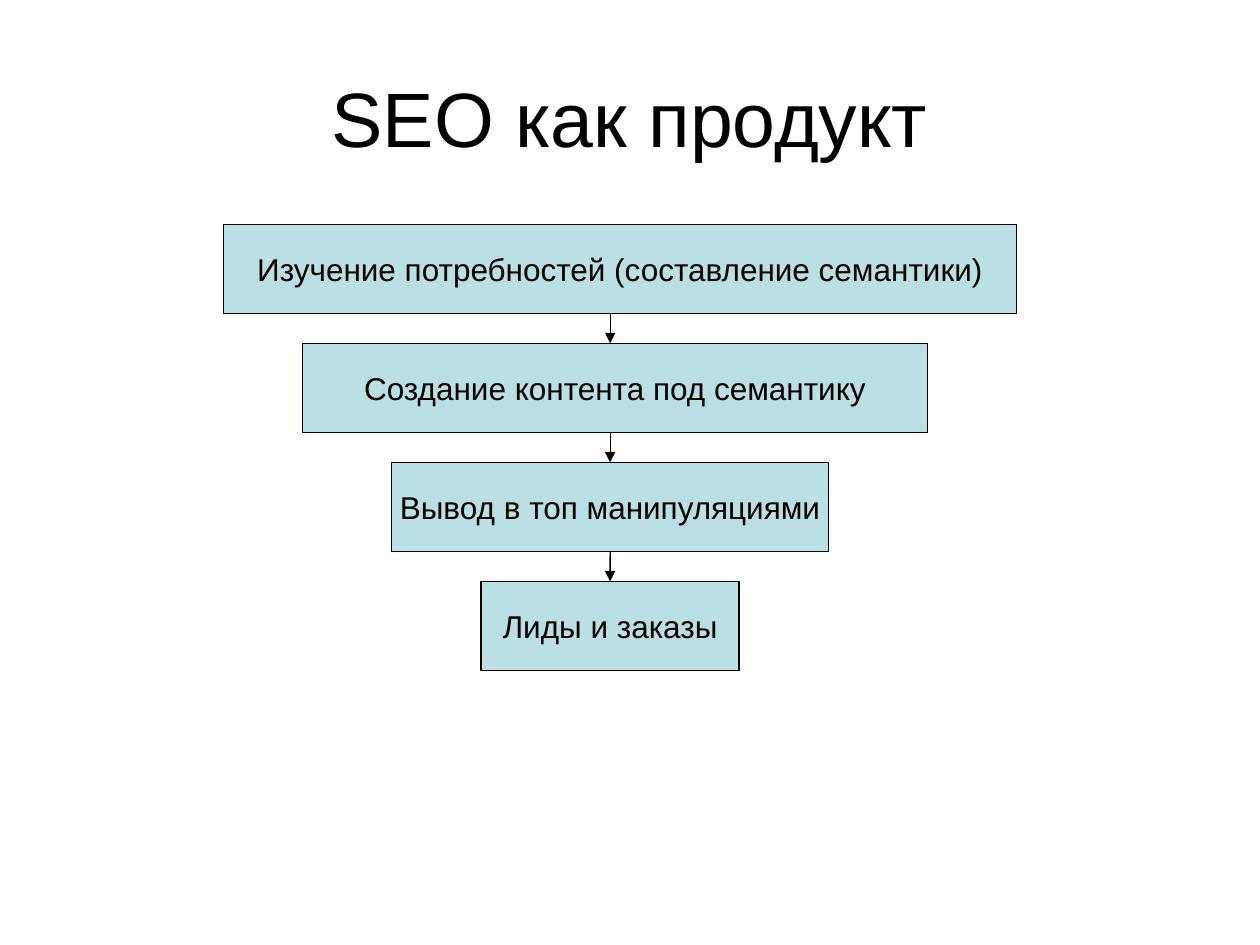
"""Builds the slide on SEO as a product: a funnel of four steps."""
from lxml import etree
from pptx import Presentation
from pptx.dml.color import RGBColor
from pptx.enum.shapes import MSO_CONNECTOR, MSO_SHAPE
from pptx.enum.text import MSO_ANCHOR, PP_ALIGN
from pptx.oxml.ns import qn
from pptx.util import Cm, Pt

BLACK = RGBColor(0x00, 0x00, 0x00)
TEAL = RGBColor(0xBB, 0xE0, 0xE3)
RECT = MSO_SHAPE.RECTANGLE
LINE = MSO_CONNECTOR.STRAIGHT
MIDDLE = MSO_ANCHOR.MIDDLE
CENTER = PP_ALIGN.CENTER

TOP, STEP, HIGH, AXIS = 4.52, 2.4, 1.8, 12.3
STEPS = [
    ("Изучение потребностей (составление семантики)", 4.5, 16),
    ("Создание контента под семантику", 6.1, 12.6),
    ("Вывод в топ манипуляциями", 7.9, 8.8),
    ("Лиды и заказы", 9.7, 5.2),
]


def write(shape, text, size, wrap):
    frame = shape.text_frame
    frame.word_wrap = wrap
    frame.vertical_anchor = MIDDLE
    para = frame.paragraphs[0]
    para.text = text
    para.alignment = CENTER
    para.font.name = "Arial"
    para.font.size = Pt(size)
    para.font.color.rgb = BLACK


deck = Presentation()
deck.slide_width, deck.slide_height = Cm(25.4), Cm(19.05)
slide = deck.slides.add_slide(deck.slide_layouts[6])
shapes = slide.shapes

title = shapes.add_textbox(Cm(1.27), Cm(0.76), Cm(22.86), Cm(3.18))
write(title, "SEO как продукт", 44, True)

boxes = []
for row, (text, left, width) in enumerate(STEPS):
    box = shapes.add_shape(RECT, Cm(left), Cm(TOP + row * STEP), Cm(width), Cm(HIGH))
    box.shadow.inherit = False
    box.fill.solid()
    box.fill.fore_color.rgb = TEAL
    box.line.color.rgb = BLACK
    box.line.width = Pt(0.75)
    write(box, text, 18, False)
    boxes.append(box)

for upper, lower in zip(boxes, boxes[1:]):
    start = upper.top + upper.height
    arrow = shapes.add_connector(LINE, Cm(AXIS), start, Cm(AXIS), lower.top)
    arrow.line.color.rgb = BLACK
    arrow.line.width = Pt(0.75)
    line = arrow.line._get_or_add_ln()
    etree.SubElement(line, qn("a:tailEnd"), type="triangle")
    etree.SubElement(arrow._element.spPr, qn("a:effectLst"))
    if abs(upper.left + upper.width // 2 - Cm(AXIS)) < Cm(0.02):
        arrow.begin_connect(upper, 2)
    if abs(lower.left + lower.width // 2 - Cm(AXIS)) < Cm(0.02):
        arrow.end_connect(lower, 0)

deck.save("out.pptx")
